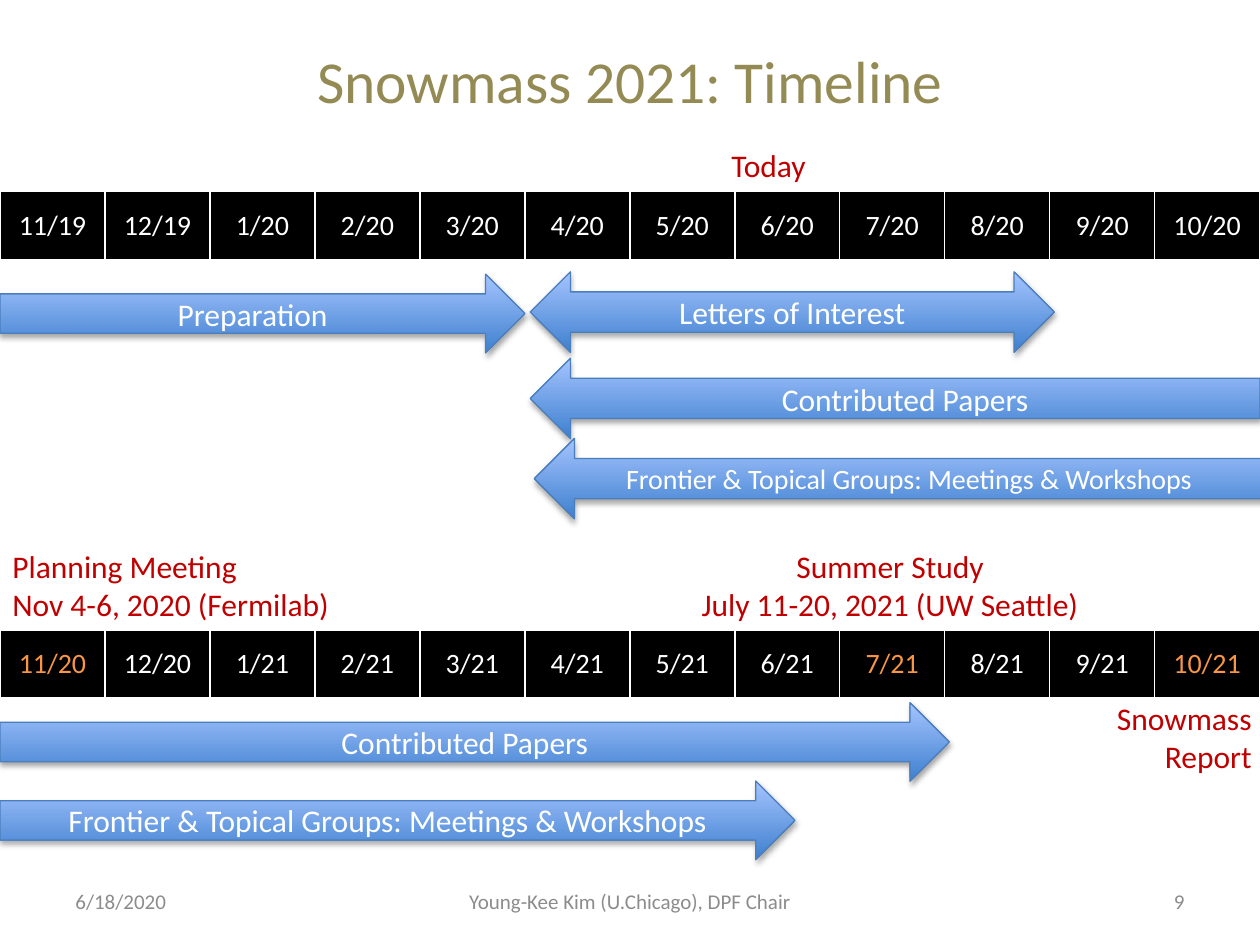
from lxml.etree import SubElement
from pptx import Presentation
from pptx.dml.color import RGBColor
from pptx.enum.shapes import MSO_SHAPE
from pptx.enum.text import MSO_ANCHOR, MSO_AUTO_SIZE, PP_ALIGN
from pptx.oxml.ns import qn
from pptx.util import Pt

FONT = "Calibri"
WHITE, BLACK, RED, ORANGE, GRAY = "FFFFFF", "000000", "C00000", "F79646", "8C8C8C"
LEFT, CENTER, RIGHT = PP_ALIGN.LEFT, PP_ALIGN.CENTER, PP_ALIGN.RIGHT


def rgb(color):
    return RGBColor.from_string(color)


def write(text_frame, text, size, color, align=CENTER):
    text_frame.text = text
    for paragraph in text_frame.paragraphs:
        paragraph.alignment = align
        paragraph.font.name = FONT
        paragraph.font.size = Pt(size)
        paragraph.font.bold = False
        paragraph.font.color.rgb = rgb(color)


presentation = Presentation()
presentation.slide_width, presentation.slide_height = Pt(720), Pt(540)
slide = presentation.slides.add_slide(presentation.slide_layouts[5])

# Title
title = slide.shapes.title
title.left, title.top, title.width, title.height = Pt(0), Pt(13), Pt(720), Pt(65.5)
title.text_frame.vertical_anchor = MSO_ANCHOR.MIDDLE
write(title.text_frame, "Snowmass 2021: Timeline", 34, "948A54")

# Month strips, November to October, with milestone months in orange
milestones = {"11/20", "7/21", "10/21"}
for top, year in [(109.5, 19), (360, 20)]:
    months = [f"{month}/{year}" for month in (11, 12)]
    months += [f"{month}/{year + 1}" for month in range(1, 11)]
    table = slide.shapes.add_table(1, 12, Pt(0), Pt(top), Pt(720), Pt(39)).table
    for cell, month in zip(table.iter_cells(), months):
        cell.fill.solid()
        cell.fill.fore_color.rgb = rgb(BLACK)
        cell.vertical_anchor = MSO_ANCHOR.MIDDLE
        # The second strip alone marks its milestones
        color = ORANGE if month in milestones else WHITE
        write(cell.text_frame, month, 16, color)

# Activity arrows
groups = "Frontier & Topical Groups: Meetings & Workshops"
arrows = [
    (MSO_SHAPE.LEFT_RIGHT_ARROW, 303, 155.3, 299.5, 46, "Letters of Interest", 18),
    (MSO_SHAPE.RIGHT_ARROW, 0, 401.5, 542.5, 45, "Contributed Papers", 18),
    (MSO_SHAPE.LEFT_ARROW, 303, 204.7, 417, 46, "Contributed Papers", 18),
    (MSO_SHAPE.RIGHT_ARROW, 0, 156.7, 300, 45, "Preparation", 18),
    (MSO_SHAPE.LEFT_ARROW, 305.3, 250.5, 417, 46, groups, 16),
    (MSO_SHAPE.RIGHT_ARROW, 0, 446.3, 454.3, 45, groups, 18),
]
for kind, left, top, width, height, text, size in arrows:
    arrow = slide.shapes.add_shape(kind, Pt(left), Pt(top), Pt(width), Pt(height))
    arrow.fill.gradient()
    arrow.fill.gradient_angle = 90
    for stop, color in zip(arrow.fill.gradient_stops, ("3F80CE", "A4C4FF")):
        stop.color.rgb = rgb(color)
    for stop, position in zip(arrow.fill.gradient_stops, (0, 1)):
        stop.position = position
    arrow.line.color.rgb = rgb("4B7EBC")
    arrow.line.width = Pt(0.75)
    # Soft shadow straight below
    arrow.shadow.inherit = False
    effects = arrow._element.spPr.find(qn("a:effectLst"))
    shadow = SubElement(effects, qn("a:outerShdw"), blurRad=str(Pt(3.1)),
                        dist=str(Pt(1.8)), dir="5400000", rotWithShape="0")
    shadow_color = SubElement(shadow, qn("a:srgbClr"), val=BLACK)
    SubElement(shadow_color, qn("a:alpha"), val="35000")
    arrow.text_frame.vertical_anchor = MSO_ANCHOR.MIDDLE
    arrow.text_frame.word_wrap = True
    write(arrow.text_frame, text, size, WHITE)

# Milestone labels
labels = [
    (0, 309, 197.5, 51, "Planning Meeting\nNov 4-6, 2020 (Fermilab)", LEFT),
    (392.4, 309, 232.5, 51, "Summer Study\nJuly 11-20, 2021 (UW Seattle)", CENTER),
    (630, 396, 92.4, 51, "Snowmass\nReport", RIGHT),
    (410.4, 80, 57.6, 29, "Today", CENTER),
]
for left, top, width, height, text, align in labels:
    label = slide.shapes.add_textbox(Pt(left), Pt(top), Pt(width), Pt(height))
    label.text_frame.word_wrap = False
    label.text_frame.auto_size = MSO_AUTO_SIZE.SHAPE_TO_FIT_TEXT
    write(label.text_frame, text, 18, RED, align)

# Footer
footers = [
    (36, 168, "6/18/2020", LEFT),
    (246, 228, "Young-Kee Kim (U.Chicago), DPF Chair", CENTER),
    (516, 168, "9", RIGHT),
]
for left, width, text, align in footers:
    footer = slide.shapes.add_textbox(Pt(left), Pt(500.5), Pt(width), Pt(28.75))
    footer.text_frame.word_wrap = True
    footer.text_frame.vertical_anchor = MSO_ANCHOR.MIDDLE
    write(footer.text_frame, text, 12, GRAY, align)

presentation.save("out.pptx")
